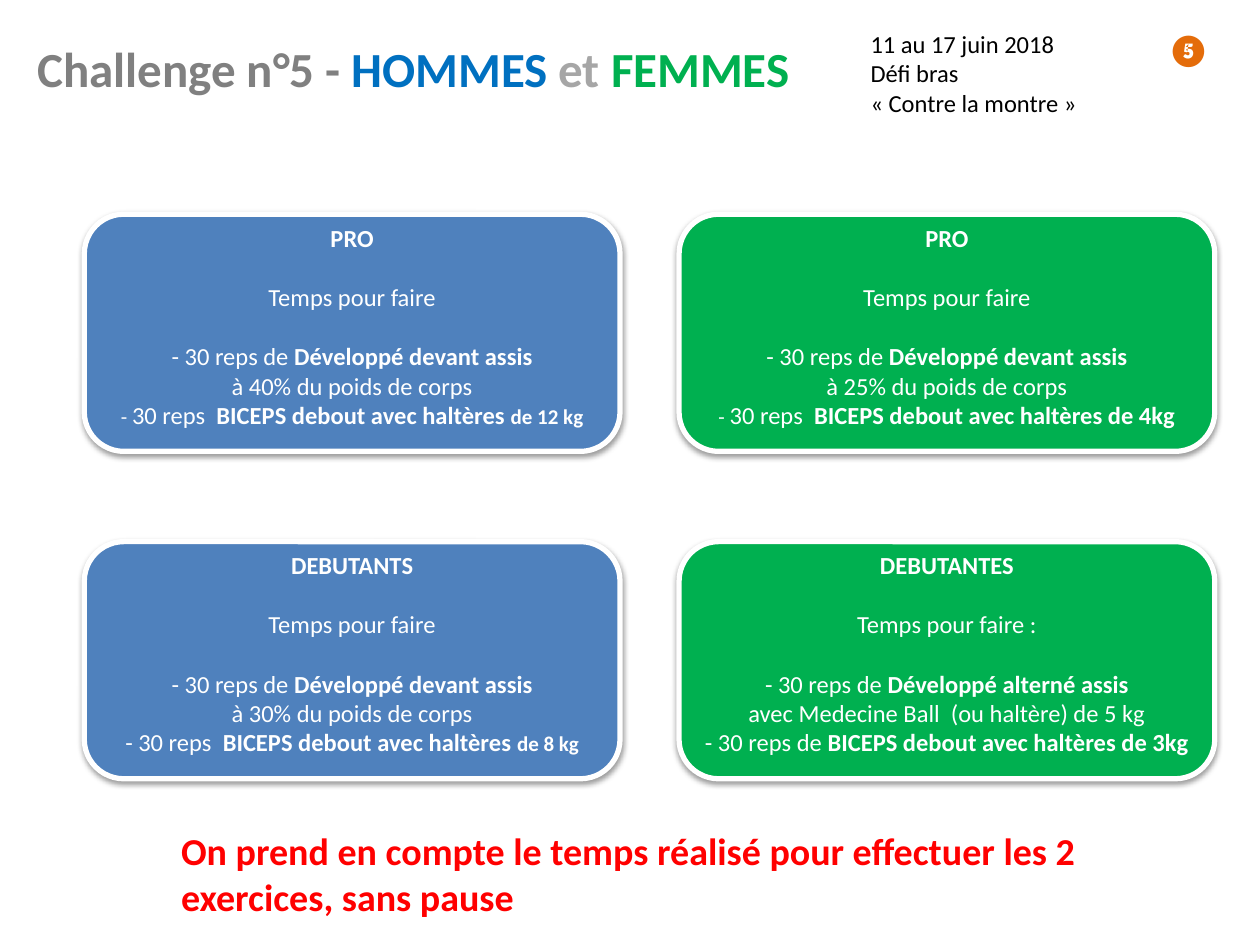
from dataclasses import dataclass
from typing import Optional

from lxml import etree
from pptx import Presentation
from pptx import util as u
from pptx.dml.color import RGBColor
from pptx.enum import shapes, text
from pptx.oxml import ns

FONT = "Calibri"
COLOURS = {
    "title": "808080",
    "title_link": "A6A6A6",
    "title_men": "0070C0",
    "men": "4F81BD",
    "women": "00B050",
    "badge": "E46C0A",
    "rule": "FF0000",
    "black": "000000",
    "white": "FFFFFF",
}
CARD_LEFTS = {"men": 1.7, "women": 13.69}
CARD_TOPS = {"pro": 4.32, "beginner": 10.92}
CARD_WIDTH, CARD_HEIGHT = 10.8, 4.78


@dataclass
class Span:
    words: str
    bold: bool = False
    size: Optional[float] = None
    colour: Optional[str] = None


@dataclass
class Line:
    spans: list[Span]
    gap: float = 0


@dataclass
class Card:
    public: str
    level: str
    heading: str
    intro: str
    press: str
    load: str
    curls: list[Span]

    def lines(self) -> list[Line]:
        return [
            Line([Span(self.heading, True)]),
            Line([Span(self.intro)], gap=17),
            Line([Span("- 30 reps de "), Span(self.press, True)], gap=17),
            Line([Span(self.load)]),
            Line(self.curls),
        ]


CARDS = [
    Card("men", "pro", "PRO", "Temps pour faire", "Développé devant assis",
         "à 40% du poids de corps",
         [Span("- ", size=12), Span("30 reps  "),
          Span("BICEPS debout avec haltères ", True), Span("de 12 kg", True, 12)]),
    Card("women", "pro", "PRO", "Temps pour faire", "Développé devant assis",
         "à 25% du poids de corps",
         [Span("- ", size=12), Span("30 reps  "),
          Span("BICEPS debout avec haltères de 4kg", True)]),
    Card("men", "beginner", "DEBUTANTS", "Temps pour faire", "Développé devant assis",
         "à 30% du poids de corps",
         [Span("- 30 reps  "), Span("BICEPS debout avec haltères ", True),
          Span("de 8 kg", True, 12)]),
    Card("women", "beginner", "DEBUTANTES", "Temps pour faire :", "Développé alterné assis",
         "avec Medecine Ball  (ou haltère) de 5 kg",
         [Span("- 30 reps de "), Span("BICEPS debout avec haltères de 3kg", True)]),
]


def rgb(name: str) -> RGBColor:
    return RGBColor.from_string(COLOURS[name])


def write(frame, lines: list[Line], size: float, colour: str, align=text.PP_ALIGN.LEFT) -> None:
    """Fill a text frame; spans override the common size and colour."""
    for index, line in enumerate(lines):
        paragraph = frame.add_paragraph() if index else frame.paragraphs[0]
        paragraph.alignment = align
        paragraph.space_before = u.Pt(line.gap)
        paragraph.font.name = FONT
        for span in line.spans:
            run = paragraph.add_run()
            run.text = span.words
            run.font.name = FONT
            run.font.bold = span.bold
            run.font.size = u.Pt(span.size or size)
            run.font.color.rgb = rgb(span.colour or colour)


def add_label(slide, left: float, top: float, width: float, height: float,
              lines: list[Line], size: float, colour: str,
              anchor=text.MSO_ANCHOR.TOP, wrap: bool = True) -> None:
    label = slide.shapes.add_textbox(u.Cm(left), u.Cm(top), u.Cm(width), u.Cm(height))
    frame = label.text_frame
    frame.word_wrap = wrap
    frame.vertical_anchor = anchor
    write(frame, lines, size, colour)


def add_soft_shadow(shape) -> None:
    shape.shadow.inherit = False
    effects = shape._element.spPr.find(ns.qn("a:effectLst"))
    shadow = etree.SubElement(
        effects, ns.qn("a:outerShdw"), blurRad=str(u.Pt(3.1)), dist=str(u.Pt(1.6)),
        dir="5400000", rotWithShape="0")
    tint = etree.SubElement(shadow, ns.qn("a:srgbClr"), val=COLOURS["black"])
    etree.SubElement(tint, ns.qn("a:alpha"), val="38000")


def add_card(slide, card: Card) -> None:
    box = slide.shapes.add_shape(
        shapes.MSO_SHAPE.ROUNDED_RECTANGLE,
        u.Cm(CARD_LEFTS[card.public]), u.Cm(CARD_TOPS[card.level]),
        u.Cm(CARD_WIDTH), u.Cm(CARD_HEIGHT))
    box.fill.solid()
    box.fill.fore_color.rgb = rgb(card.public)
    box.line.color.rgb = rgb("white")
    box.line.width = u.Pt(3)
    add_soft_shadow(box)
    frame = box.text_frame
    frame.word_wrap = True
    frame.vertical_anchor = text.MSO_ANCHOR.MIDDLE
    frame.margin_left = frame.margin_right = u.Cm(0.1)
    frame.margin_top, frame.margin_bottom = u.Cm(0), u.Cm(0.27)
    write(frame, card.lines(), 14, "white", text.PP_ALIGN.CENTER)


def main() -> None:
    deck = Presentation()
    deck.slide_width, deck.slide_height = u.Cm(25.4), u.Cm(19.05)
    slide = deck.slides.add_slide(deck.slide_layouts[6])

    title = [Span("Challenge n°5 - ", True), Span("HOMMES ", True, colour="title_men"),
             Span("et ", True, colour="title_link"), Span("FEMMES", True, colour="women")]
    add_label(slide, 0.5, 0.46, 24, 1.8, [Line(title)], 28, "title", text.MSO_ANCHOR.MIDDLE)
    add_label(slide, 23.29, 0.48, 1.37, 1.02, [Line([Span("❺", True)])], 18, "badge", wrap=False)
    event = ["11 au 17 juin 2018", "Défi bras", "«\u00a0Contre la montre\u00a0»".replace("\u00a0", " ")]
    add_label(slide, 17.3, 0.46, 4.75, 2.06, [Line([Span(words)]) for words in event], 14, "black")

    for card in CARDS:
        add_card(slide, card)

    rule = "On prend en compte le temps réalisé pour effectuer les 2 exercices, sans pause"
    add_label(slide, 3.4, 16.71, 19, 1.8, [Line([Span(rule, True)])], 21.7, "rule",
              text.MSO_ANCHOR.MIDDLE)
    deck.save("out.pptx")


if __name__ == "__main__":
    main()
